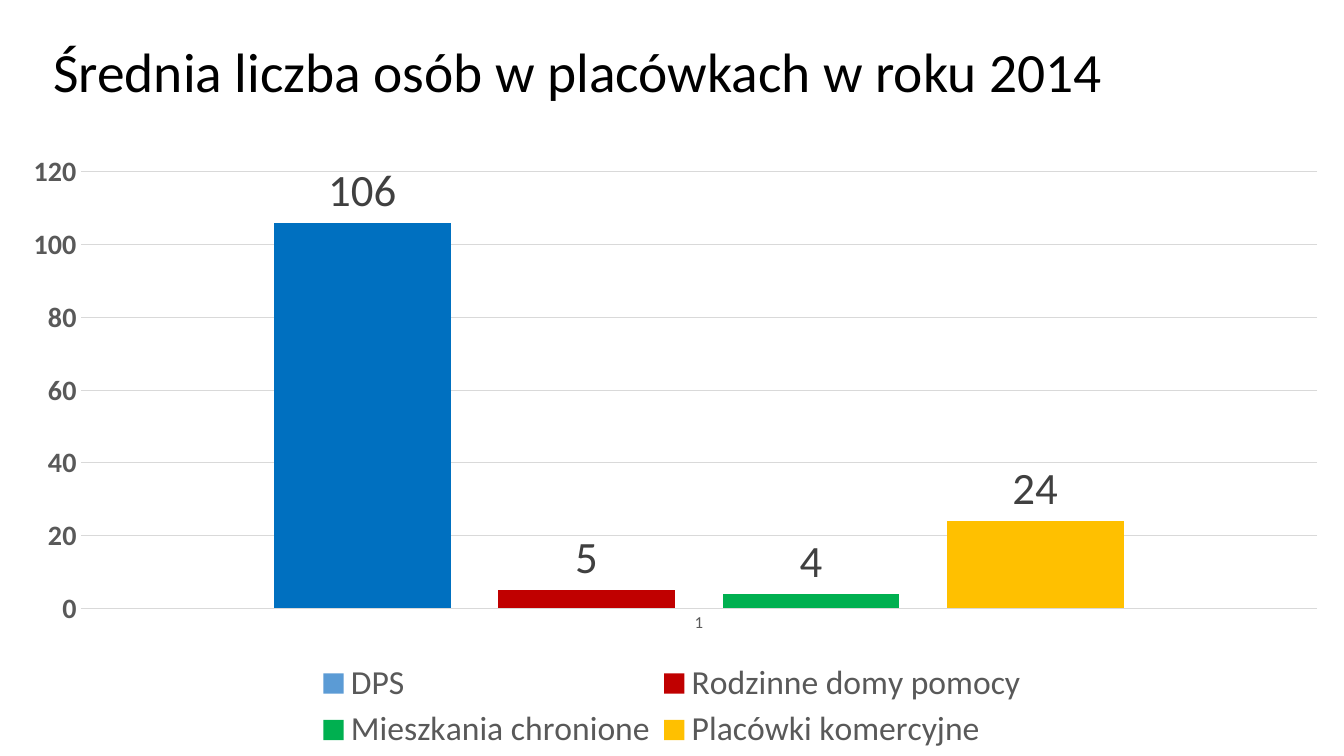
"""Build a slide with a column chart of average resident numbers by facility type."""
from lxml.etree import SubElement
from pptx import Presentation
from pptx.chart.data import CategoryChartData
from pptx.dml.color import RGBColor
from pptx.enum.chart import XL_CHART_TYPE, XL_LABEL_POSITION, XL_LEGEND_POSITION, XL_TICK_MARK
from pptx.enum.text import MSO_ANCHOR
from pptx.oxml.ns import qn
from pptx.util import Inches, Pt

BLACK = RGBColor(0x00, 0x00, 0x00)
DARK_GREY = RGBColor(0x40, 0x40, 0x40)
GREY = RGBColor(0x59, 0x59, 0x59)
LIGHT_GREY = RGBColor(0xD9, 0xD9, 0xD9)
LIGHT_BLUE = RGBColor(0x5B, 0x9B, 0xD5)
BLUE = RGBColor(0x00, 0x70, 0xC0)
RED = RGBColor(0xC0, 0x00, 0x00)
GREEN = RGBColor(0x00, 0xB0, 0x50)
AMBER = RGBColor(0xFF, 0xC0, 0x00)

FONT = "Calibri"
TITLE = "Średnia liczba osób w placówkach w roku 2014"
FACILITIES = [
    ("DPS", 106, LIGHT_BLUE),
    ("Rodzinne domy pomocy", 5, RED),
    ("Mieszkania chronione", 4, GREEN),
    ("Placówki komercyjne", 24, AMBER),
]
PLOT_AREA = (0.06, 0.05, 0.92, 0.71)
LEGEND_AREA = (0.23, 0.84, 0.54, 0.16)


def style_font(font, size, color, bold=False):
    font.name, font.size, font.bold = FONT, Pt(size), bold
    font.color.rgb = color


def style_line(line):
    line.color.rgb = LIGHT_GREY
    line.width = Pt(0.75)


def set_layout(element, index, area, inner=False):
    for old in element.findall(qn("c:layout")):
        element.remove(old)
    layout = SubElement(element, qn("c:layout"))
    element.insert(index, layout)
    manual = SubElement(layout, qn("c:manualLayout"))
    settings = [("layoutTarget", "inner")] if inner else []
    settings += [("xMode", "edge"), ("yMode", "edge")]
    settings += zip("xywh", area)
    for tag, value in settings:
        SubElement(manual, qn(f"c:{tag}")).set("val", str(value))


def add_title(page):
    box = page.shapes.add_textbox(Inches(0.43), Inches(0.22), Inches(11.64), Inches(1.04))
    frame = box.text_frame
    frame.word_wrap = True
    frame.vertical_anchor = MSO_ANCHOR.MIDDLE
    frame.text = TITLE
    para = frame.paragraphs[0]
    para.line_spacing = 0.9
    style_font(para.runs[0].font, 39.6, BLACK)


def add_facility_chart(page):
    data = CategoryChartData(number_format="0")
    data.categories = ["1"]
    for name, value, _ in FACILITIES:
        data.add_series(name, [value])
    chart = page.shapes.add_chart(XL_CHART_TYPE.COLUMN_CLUSTERED, Inches(0), Inches(1.4),
                                  Inches(13.33), Inches(6.1), data).chart
    style_font(chart.font, 10, BLACK)
    chart.has_title = False

    plot = chart.plots[0]
    plot.vary_by_categories = False
    plot.gap_width, plot.overlap = 219, -27
    for series, (_, _, color) in zip(plot.series, FACILITIES):
        series.format.fill.solid()
        series.format.fill.fore_color.rgb = color
        series.invert_if_negative = False
        labels = series.data_labels
        labels.show_value = True
        labels.position = XL_LABEL_POSITION.OUTSIDE_END
        labels.number_format, labels.number_format_is_linked = "0", False
        style_font(labels.font, 32, DARK_GREY)
    first_bar = plot.series[0].points[0].format.fill
    first_bar.solid()
    first_bar.fore_color.rgb = BLUE

    for axis in (chart.category_axis, chart.value_axis):
        axis.major_tick_mark = axis.minor_tick_mark = XL_TICK_MARK.NONE
    style_font(chart.category_axis.tick_labels.font, 12, GREY)
    style_line(chart.category_axis.format.line)
    values = chart.value_axis
    values.minimum_scale, values.maximum_scale, values.major_unit = 0, 120, 20
    values.tick_labels.number_format = "0"
    values.tick_labels.number_format_is_linked = False
    style_font(values.tick_labels.font, 20, GREY, bold=True)
    values.format.line.fill.background()
    values.has_major_gridlines = True
    style_line(values.major_gridlines.format.line)

    chart.has_legend = True
    legend = chart.legend
    legend.position = XL_LEGEND_POSITION.BOTTOM
    legend.include_in_layout = False
    style_font(legend.font, 24, GREY)
    chart_root = chart._chartSpace
    set_layout(chart_root.find(f".//{qn('c:plotArea')}"), 0, PLOT_AREA, inner=True)
    set_layout(chart_root.find(f".//{qn('c:legend')}"), 1, LEGEND_AREA)


def main():
    deck = Presentation()
    deck.slide_width, deck.slide_height = Inches(13.33), Inches(7.5)
    page = deck.slides.add_slide(deck.slide_layouts[6])
    add_title(page)
    add_facility_chart(page)
    deck.save("out.pptx")


if __name__ == "__main__":
    main()
